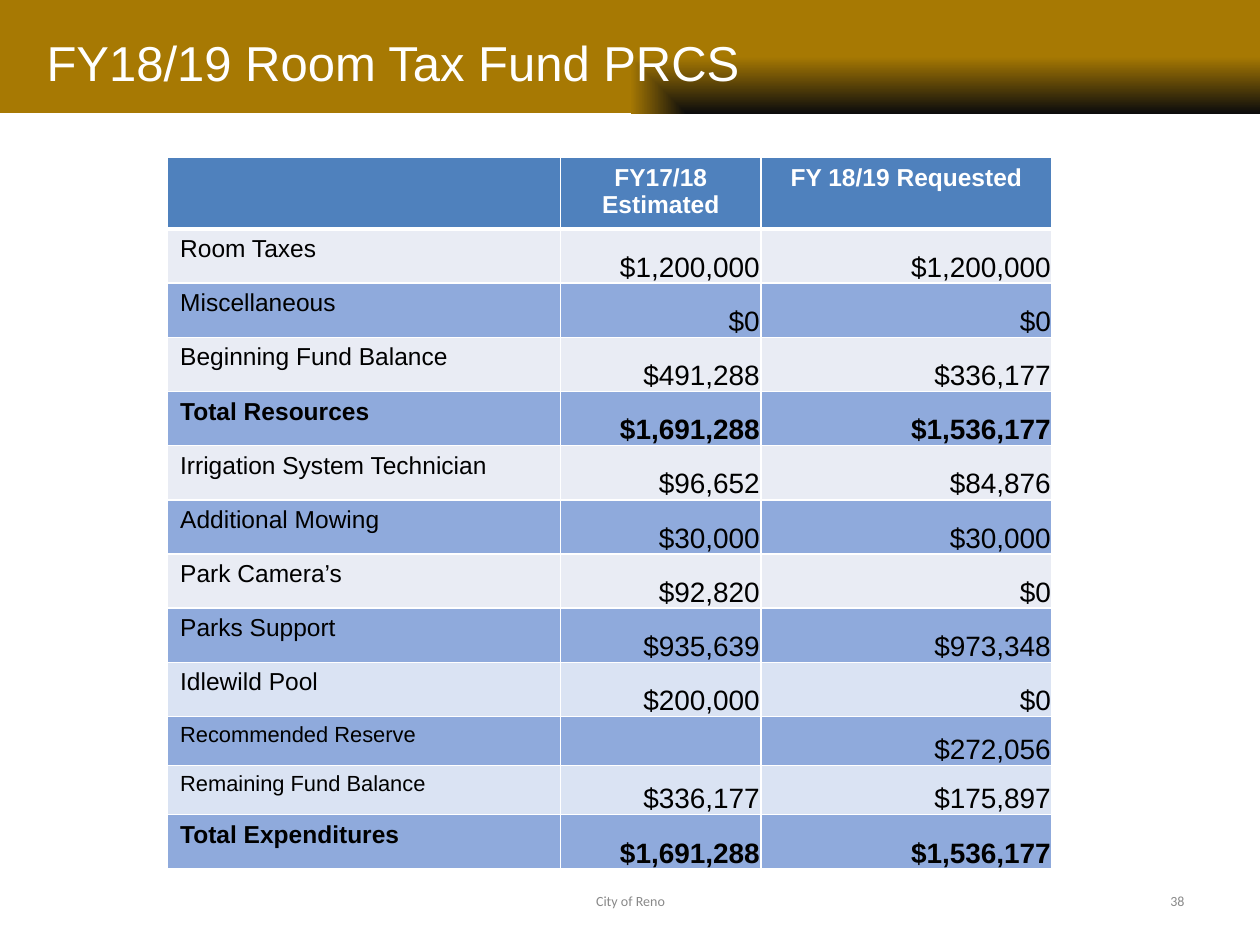
import pptx
import pptx.dml.color
import pptx.enum.shapes
import pptx.enum.text
import pptx.oxml
import pptx.oxml.ns
import pptx.util

Inches = pptx.util.Inches
Align = pptx.enum.text.PP_ALIGN
Anchor = pptx.enum.text.MSO_ANCHOR
namespace = pptx.oxml.ns.nsdecls("a")

colors = {
    "white": "FFFFFF", "black": "000000", "gray": "898989",
    "gold": "A77903", "shade": "0C0C0C", "header": "4F81BD",
    "pale": "E9ECF4", "light": "DAE3F3", "blue": "8FAADC",
}


def write_text(frame, text, size=14, color="black", bold=False, font="Arial", align=Align.LEFT):
    paragraph = frame.paragraphs[0]
    paragraph.alignment = align
    run = paragraph.add_run()
    run.text = text
    run.font.name = font
    run.font.size = pptx.util.Pt(size)
    run.font.bold = bold
    run.font.color.rgb = pptx.dml.color.RGBColor.from_string(colors[color])
    return paragraph


def style_cell(cell, fill, top, bottom):
    properties = cell._tc.get_or_add_tcPr()
    for side, points in (("L", 1), ("R", 1), ("T", top), ("B", bottom)):
        properties.append(pptx.oxml.parse_xml(
            f'<a:ln{side} {namespace} w="{pptx.util.Pt(points)}"><a:solidFill>'
            f'<a:srgbClr val="{colors["white"]}"/></a:solidFill></a:ln{side}>'))
    cell.fill.solid()
    cell.fill.fore_color.rgb = pptx.dml.color.RGBColor.from_string(colors[fill])


presentation = pptx.Presentation()
presentation.slide_width = Inches(10)
presentation.slide_height = Inches(7.5)
width, height = presentation.slide_width, presentation.slide_height
slide = presentation.slides.add_slide(presentation.slide_layouts[5])

banner = slide.shapes.add_shape(
    pptx.enum.shapes.MSO_SHAPE.RECTANGLE, 0, 0, width, int(height * 0.12))
banner.shadow.inherit = False
banner.line.fill.background()
banner.fill.gradient()
gradient = banner._element.spPr.find(pptx.oxml.ns.qn("a:gradFill"))
gradient.getparent().replace(gradient, pptx.oxml.parse_xml(
    f'<a:gradFill {namespace} rotWithShape="1"><a:gsLst>'
    f'<a:gs pos="0"><a:srgbClr val="{colors["shade"]}"/></a:gs>'
    f'<a:gs pos="100000"><a:srgbClr val="{colors["gold"]}"/></a:gs></a:gsLst>'
    '<a:path path="rect"><a:fillToRect l="100000" t="100000"/></a:path>'
    '<a:tileRect r="-100000" b="-100000"/></a:gradFill>'))

title = slide.shapes.title
title.left, title.top, title.width, title.height = map(Inches, (0.27, 0, 9.23, 0.99))
title.text_frame.vertical_anchor = Anchor.MIDDLE
title.text_frame.word_wrap = True
heading = write_text(title.text_frame, "FY18/19 Room Tax Fund PRCS", size=28, color="white")
indent = heading._p.get_or_add_pPr()
indent.set("marL", str(Inches(0.5)))
indent.set("indent", str(Inches(-0.5)))
title._element.addprevious(banner._element)

footers = [("City of Reno", 3.42, 3.17, Align.CENTER), ("38", 7.17, 2.33, Align.RIGHT)]
for text, left, box_width, align in footers:
    box = slide.shapes.add_textbox(Inches(left), Inches(6.95), Inches(box_width), Inches(0.4))
    box.text_frame.word_wrap = True
    box.text_frame.vertical_anchor = Anchor.MIDDLE
    write_text(box.text_frame, text, size=8, color="gray", font="Calibri", align=align)

headers = ["", "FY17/18 Estimated", "FY 18/19 Requested"]
budget = [
    ("Room Taxes", "$1,200,000", "$1,200,000"),
    ("Miscellaneous", "$0", "$0"),
    ("Beginning Fund Balance", "$491,288", "$336,177"),
    ("Total Resources", "$1,691,288", "$1,536,177"),
    ("Irrigation System Technician", "$96,652", "$84,876"),
    ("Additional Mowing", "$30,000", "$30,000"),
    ("Park Camera’s", "$92,820", "$0"),
    ("Parks Support", "$935,639", "$973,348"),
    ("Idlewild Pool", "$200,000", "$0"),
    ("Recommended Reserve", "", "$272,056"),
    ("Remaining Fund Balance", "$336,177", "$175,897"),
    ("Total Expenditures", "$1,691,288", "$1,536,177"),
]
small_rows = ("Recommended Reserve", "Remaining Fund Balance")

table = slide.shapes.add_table(
    len(budget) + 1, len(headers), Inches(1.33), Inches(1.25), Inches(7.02), Inches(5.62)).table
for column, column_width in zip(table.columns, (3.12, 1.59, 2.31)):
    column.width = Inches(column_width)

table.rows[0].height = Inches(0.46)
for cell, text in zip(table.rows[0].cells, headers):
    style_cell(cell, "header", 1, 3)
    if text:
        write_text(cell.text_frame, text, color="white", bold=True, align=Align.CENTER)

for number, values in enumerate(budget, start=1):
    label = values[0]
    small = label in small_rows
    bold = label.startswith("Total")
    fill = "blue" if number % 2 == 0 else "pale" if number < 9 else "light"
    row = table.rows[number]
    row.height = Inches(0.39 if small else 0.43)
    for position, (cell, text) in enumerate(zip(row.cells, values)):
        style_cell(cell, fill, 3 if number == 1 else 1, 1)
        if position == 0:
            write_text(cell.text_frame, text, size=12.5 if small else 14, bold=bold)
            continue
        cell.vertical_anchor = Anchor.BOTTOM
        cell.margin_left = cell.margin_right = cell.margin_top = Inches(0.01)
        cell.margin_bottom = 0
        if text:
            write_text(cell.text_frame, text, size=16, bold=bold, align=Align.RIGHT)

presentation.save("out.pptx")
